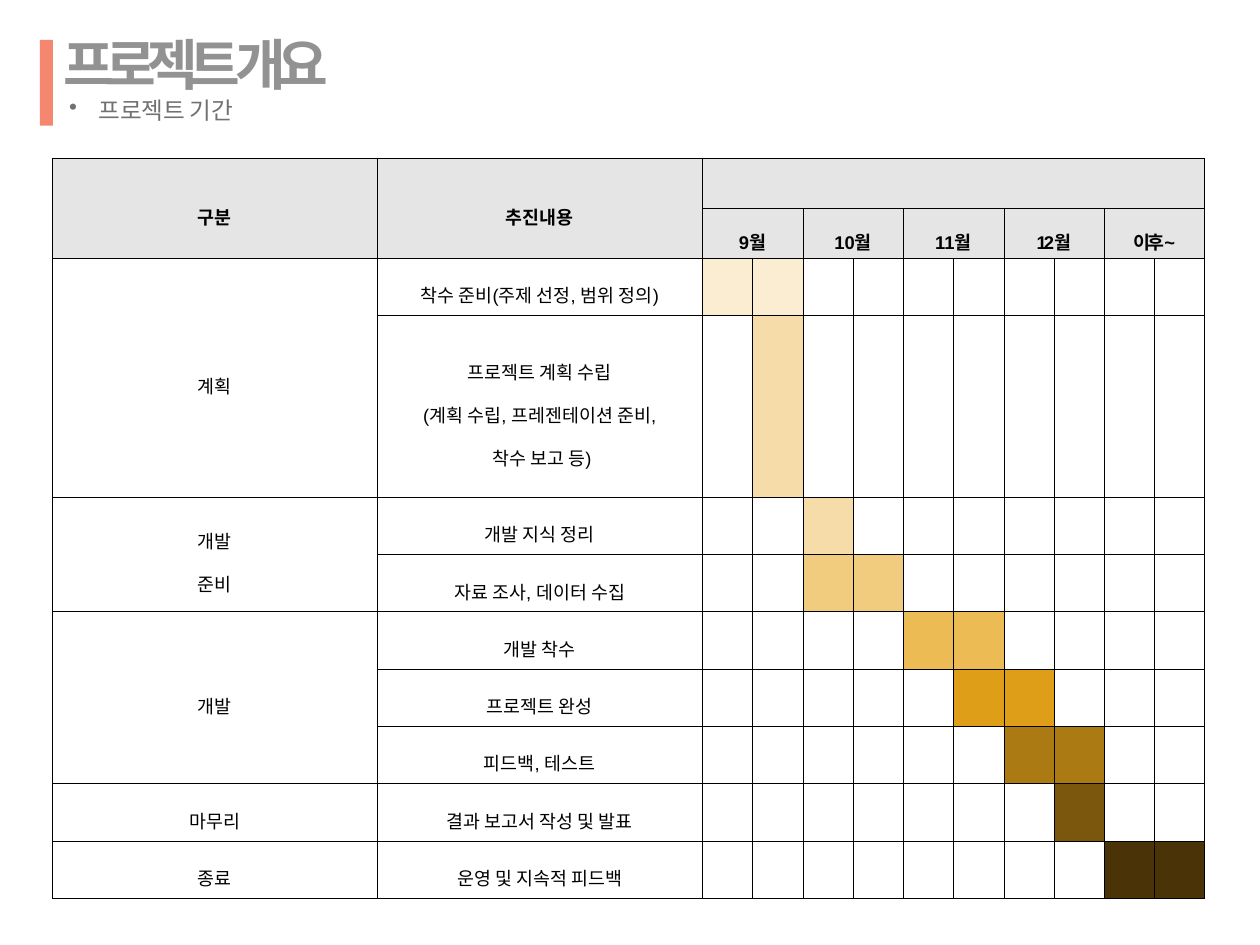
from lxml import etree
from pptx import Presentation
from pptx.dml.color import RGBColor
from pptx.enum import shapes, text
from pptx.oxml.ns import qn
from pptx.util import Cm, Pt

WHITE = RGBColor(0xFF, 0xFF, 0xFF)
BLACK = RGBColor(0, 0, 0)
CORAL = RGBColor(0xF5, 0x86, 0x70)
TITLE_GREY = RGBColor(0x93, 0x92, 0x92)
SUBTITLE_GREY = RGBColor(0x70, 0x71, 0x71)
HEADER_GREY = RGBColor(0xE5, 0xE5, 0xE5)
CREAM = RGBColor(0xFA, 0xED, 0xD2)
SAND = RGBColor(0xF5, 0xDC, 0xA8)
WHEAT = RGBColor(0xF1, 0xCB, 0x7E)
AMBER = RGBColor(0xEC, 0xBB, 0x53)
GOLD = RGBColor(0xDE, 0x9E, 0x17)
OCHRE = RGBColor(0xAC, 0x7A, 0x12)
BROWN = RGBColor(0x7A, 0x57, 0x0D)
DARK_BROWN = RGBColor(0x49, 0x33, 0x07)

# label and letter spacing in hundredths of a point
MONTHS = [("9월", 0), ("10월", 0), ("11월", 0), ("12월", -230), ("이후~", -230)]

# phase -> (task, first half-month, number of half-months, bar colour)
PHASES = [
    ("계획", [
        ("착수 준비(주제 선정, 범위 정의)", 0, 2, CREAM),
        ("프로젝트 계획 수립\n(계획 수립, 프레젠테이션 준비,\n 착수 보고 등)", 1, 1, SAND)]),
    ("개발\n준비", [
        ("개발 지식 정리", 2, 1, SAND),
        ("자료 조사, 데이터 수집", 2, 2, WHEAT)]),
    ("개발", [
        ("개발 착수", 4, 2, AMBER),
        ("프로젝트 완성", 5, 2, GOLD),
        ("피드백, 테스트", 6, 2, OCHRE)]),
    ("마무리", [("결과 보고서 작성 및 발표", 7, 1, BROWN)]),
    ("종료", [("운영 및 지속적 피드백", 8, 2, DARK_BROWN)]),
]
HEADER_ROWS, LABEL_COLS = 2, 2
LABEL_W, HALF_MONTH_W = 8.74, 1.35
HEADER_H, TASK_H, LINE_H = 1.35, 1.54, 1.67


def set_spacing(p, spacing):
    for r in p.runs:
        r._r.get_or_add_rPr().set("spc", str(spacing))


def add_heading(s, left, top, width, height):
    bar = s.shapes.add_shape(shapes.MSO_SHAPE.RECTANGLE, Cm(left), Cm(top + 0.21),
                             Cm(0.35), Cm(height - 0.18))
    bar.shadow.inherit = False
    bar.fill.solid()
    bar.fill.fore_color.rgb = CORAL
    bar.line.fill.background()

    tf = s.shapes.add_textbox(Cm(left + 0.61), Cm(top), Cm(width - 0.61), Cm(height)).text_frame
    tf.word_wrap = True
    tf.margin_left = tf.margin_right = tf.margin_top = tf.margin_bottom = 0
    tf.text = "프로젝트 개요\n프로젝트 기간"
    title, subtitle = tf.paragraphs
    for p, font, size, color, bold, line, spacing, margin, indent in (
            (title, "Arial", 42, TITLE_GREY, True, 49.4, -670, 0.03, 0),
            (subtitle, "Open Sans", 18, SUBTITLE_GREY, False, 20.6, -10, 0.97, -0.79)):
        p.font.name, p.font.size, p.font.bold = font, Pt(size), bold
        p.font.color.rgb = color
        p.line_spacing = Pt(line)
        set_spacing(p, spacing)
        pPr = p._p.get_or_add_pPr()
        pPr.set("marL", str(Cm(margin)))
        pPr.set("indent", str(Cm(indent)))
    bullet = etree.Element(qn("a:buChar"), char="•")
    subtitle._p.pPr.find(qn("a:defRPr")).addprevious(bullet)


def format_cell(cell, fill):
    """Fill the cell and draw a thin black border on its four sides."""
    cell.fill.solid()
    cell.fill.fore_color.rgb = fill
    tcPr = cell._tc.get_or_add_tcPr()
    for i, side in enumerate(("a:lnL", "a:lnR", "a:lnT", "a:lnB")):
        ln = etree.Element(qn(side), w=str(Pt(0.28)))
        solid = etree.SubElement(ln, qn("a:solidFill"))
        etree.SubElement(solid, qn("a:srgbClr"), val=str(BLACK))
        tcPr.insert(i, ln)


def write_cell(cell, label, bold=False, spacing=0):
    cell.margin_left = cell.margin_right = Cm(0.18)
    cell.margin_top = cell.margin_bottom = Cm(0.05)
    cell.vertical_anchor = text.MSO_ANCHOR.MIDDLE
    cell.text = label
    for p in cell.text_frame.paragraphs:
        p.alignment = text.PP_ALIGN.CENTER
        p.line_spacing = 1.6
        p.font.name, p.font.size, p.font.bold = "Arial", Pt(14), bold
        p.font.color.rgb = BLACK
        set_spacing(p, spacing)


def add_schedule(s, left, top):
    tasks = [task for _, group in PHASES for task in group]
    widths = [LABEL_W] * LABEL_COLS + [HALF_MONTH_W] * (2 * len(MONTHS))
    heights = [HEADER_H] * HEADER_ROWS + [
        TASK_H + LINE_H * label.count("\n") for label, *_ in tasks]
    table = s.shapes.add_table(len(heights), len(widths), Cm(left), Cm(top),
                               Cm(sum(widths)), Cm(sum(heights))).table
    table.first_row = table.horz_banding = False
    for column, width in zip(table.columns, widths):
        column.width = Cm(width)
    for row, height in zip(table.rows, heights):
        row.height = Cm(height)
    for r in range(len(heights)):
        for c in range(len(widths)):
            format_cell(table.cell(r, c), HEADER_GREY if r < HEADER_ROWS else WHITE)

    for c, label in enumerate(("구분", "추진내용")):
        table.cell(0, c).merge(table.cell(1, c))
        write_cell(table.cell(0, c), label, bold=True)
    table.cell(0, LABEL_COLS).merge(table.cell(0, len(widths) - 1))
    for i, (month, spacing) in enumerate(MONTHS):
        c = LABEL_COLS + 2 * i
        table.cell(1, c).merge(table.cell(1, c + 1))
        write_cell(table.cell(1, c), month, bold=True, spacing=spacing)

    r = HEADER_ROWS
    for phase, group in PHASES:
        if len(group) > 1:
            table.cell(r, 0).merge(table.cell(r + len(group) - 1, 0))
        write_cell(table.cell(r, 0), phase)
        for label, start, length, color in group:
            write_cell(table.cell(r, 1), label)
            for c in range(start, start + length):
                table.cell(r, LABEL_COLS + c).fill.fore_color.rgb = color
            r += 1


def main():
    prs = Presentation()
    prs.slide_width, prs.slide_height = Cm(33.87), Cm(25.4)
    s = prs.slides.add_slide(prs.slide_layouts[6])
    add_heading(s, 1.07, 0.86, 10.46, 2.49)
    add_schedule(s, 1.4, 4.24)
    prs.save("out.pptx")


if __name__ == "__main__":
    main()
